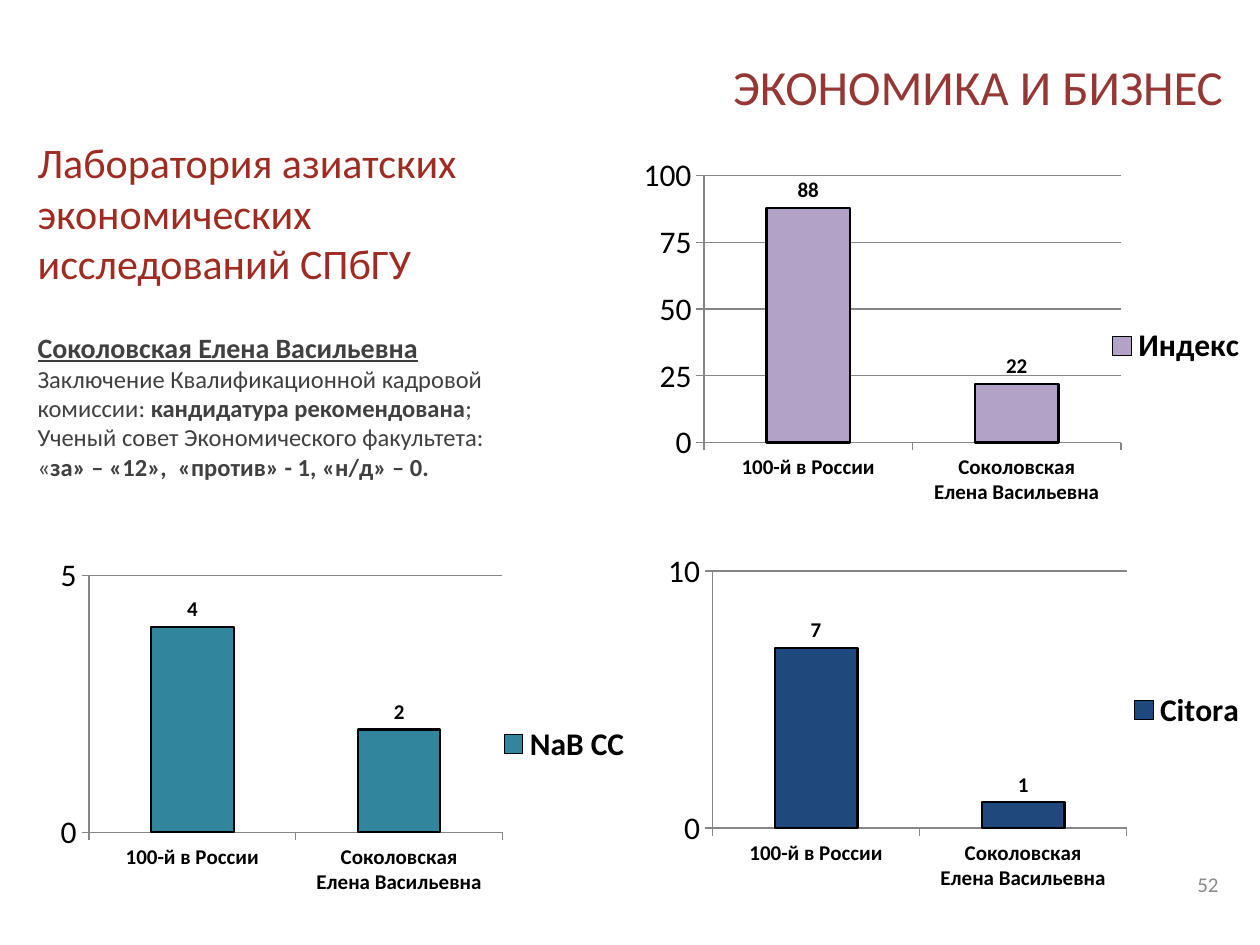
from lxml import etree
from pptx import Presentation
from pptx.chart.data import CategoryChartData
from pptx.dml.color import RGBColor
from pptx.enum.chart import XL_CHART_TYPE as ChartType, XL_LABEL_POSITION as LabelPos
from pptx.enum.chart import XL_LEGEND_POSITION as LegendPos, XL_TICK_MARK as Tick
from pptx.enum.text import MSO_ANCHOR as Anchor, PP_ALIGN as Align
from pptx.oxml.ns import qn
from pptx.util import Inches, Pt

FONT = "Calibri"
BLACK = RGBColor(0, 0, 0)
MAROON = RGBColor(0x95, 0x37, 0x35)
RED = RGBColor(0x9F, 0x2B, 0x22)
DARK = RGBColor(0x40, 0x40, 0x40)
GRAY = RGBColor(0x8C, 0x8C, 0x8C)
AXIS = RGBColor(0x86, 0x86, 0x86)
LILAC = RGBColor(0xB3, 0xA2, 0xC7)
TEAL = RGBColor(0x31, 0x85, 0x9C)
NAVY = RGBColor(0x1F, 0x49, 0x7D)

TITLE = "ЭКОНОМИКА И БИЗНЕС"
LAB = "Лаборатория азиатских экономических исследований СПбГУ"
PAGE = "52"
CANDIDATE = "Соколовская Елена Васильевна"
DECISION = [
    [("Заключение Квалификационной кадровой комиссии: ", False),
     ("кандидатура рекомендована", True), (";", False)],
    [("Ученый совет Экономического факультета:", False)],
    [("«", False), ("за» – «12»,  «против» - 1, «н/д» – 0.", True)],
]
CATEGORIES = ["100-й в России", "Соколовская\nЕлена Васильевна"]
CHART_SIZE = (4.92, 3.15)
CHARTS = [
    ("Citora", (7, 1), NAVY, 10, 10, (5.08, 4.06), (0.117, 0.15, 0.668, 0.648)),
    ("Индекс", (88, 22), LILAC, 100, 25, (5.08, 1.17), (0.103, 0.071, 0.673, 0.673)),
    ("NaB CC", (4, 2), TEAL, 5, 5, (0.2, 4.33), (0.103, 0.075, 0.667, 0.648)),
]


def style(font, size, color, bold=False):
    font.name, font.size, font.bold = FONT, Pt(size), bold
    font.color.rgb = color


def add_text(s, box, text, size, color, align=Align.LEFT, anchor=Anchor.MIDDLE, bold=False):
    tf = s.shapes.add_textbox(*map(Inches, box)).text_frame
    tf.word_wrap = True
    tf.vertical_anchor = anchor
    p = tf.paragraphs[0]
    p.text, p.alignment = text, align
    style(p.font, size, color, bold)
    return tf


def place_plot(chart, plot_box):
    area = chart._chartSpace.find(".//" + qn("c:plotArea"))
    for old in area.findall(qn("c:layout")):
        area.remove(old)
    layout = etree.Element(qn("c:layout"))
    manual = etree.SubElement(layout, qn("c:manualLayout"))
    settings = [("layoutTarget", "inner"), ("xMode", "edge"), ("yMode", "edge")]
    for tag, val in settings + list(zip("xywh", plot_box)):
        etree.SubElement(manual, qn("c:" + tag)).set("val", str(val))
    area.insert(0, layout)


def add_bars(s, name, values, color, top, step, at, plot_box):
    data = CategoryChartData()
    data.categories = CATEGORIES
    data.add_series(name, values)
    chart = s.shapes.add_chart(
        ChartType.COLUMN_CLUSTERED, *map(Inches, at + CHART_SIZE), data).chart
    style(chart.font, 18, BLACK)
    chart.has_title = False
    chart.has_legend = True
    chart.legend.position = LegendPos.RIGHT
    chart.legend.include_in_layout = False
    style(chart.legend.font, 18, BLACK, True)

    values_axis, names_axis = chart.value_axis, chart.category_axis
    values_axis.minimum_scale, values_axis.maximum_scale = 0, top
    values_axis.major_unit = step
    values_axis.has_major_gridlines = True
    lines = [values_axis.major_gridlines.format.line]
    for axis in (values_axis, names_axis):
        axis.major_tick_mark = Tick.OUTSIDE
        lines.append(axis.format.line)
    for line in lines:
        line.color.rgb = AXIS
        line.width = Pt(0.75)
    style(names_axis.tick_labels.font, 12, BLACK, True)

    plot = chart.plots[0]
    plot.gap_width = 150
    plot.vary_by_categories = False
    plot.has_data_labels = True
    labels = plot.data_labels
    labels.show_value = True
    labels.position = LabelPos.OUTSIDE_END
    style(labels.font, 12, BLACK, True)
    bars = plot.series[0].format
    bars.fill.solid()
    bars.fill.fore_color.rgb = color
    bars.line.color.rgb = BLACK
    bars.line.width = Pt(1.25)
    place_plot(chart, plot_box)


prs = Presentation()
prs.slide_width, prs.slide_height = Inches(10), Inches(7.5)
s = prs.slides.add_slide(prs.slide_layouts[6])

add_text(s, (2.56, 0.3, 7.24, 0.77), TITLE, 28, MAROON, Align.RIGHT)
for chart_spec in CHARTS:
    add_bars(s, *chart_spec)
add_text(s, (7.44, 6.82, 2.33, 0.4), PAGE, 12, GRAY, Align.RIGHT)
add_text(s, (0.2, 1.03, 4.25, 1.31), LAB, 24, RED)
tf = add_text(s, (0.2, 2.57, 4.57, 1.31), CANDIDATE, 16, DARK, anchor=Anchor.TOP, bold=True)
tf.paragraphs[0].font.underline = True
for runs in DECISION:
    p = tf.add_paragraph()
    for text, bold in runs:
        r = p.add_run()
        r.text = text
        style(r.font, 14, DARK, bold)

prs.save("out.pptx")
